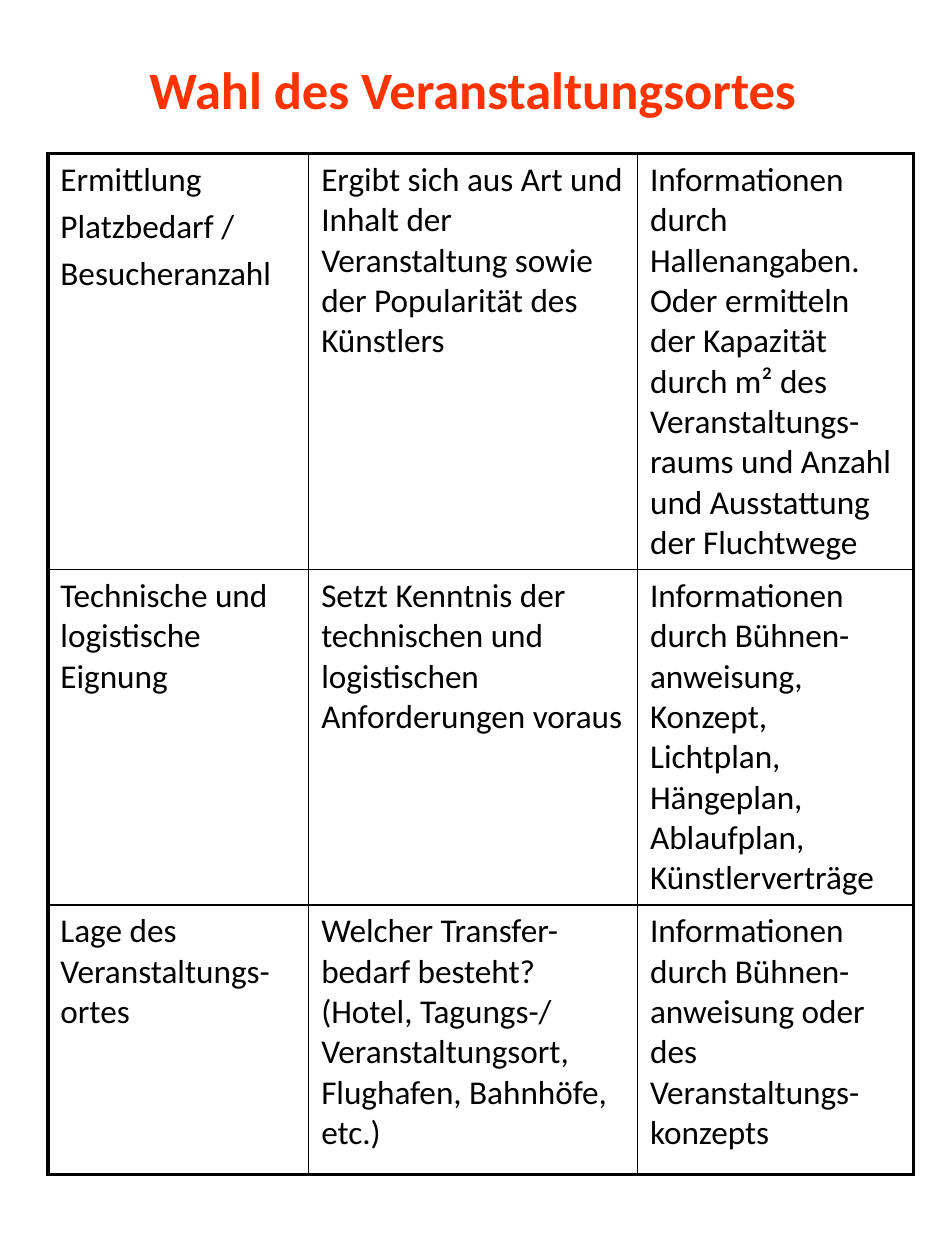
from dataclasses import dataclass

from lxml.etree import SubElement
from pptx import Presentation
from pptx.dml.color import RGBColor
from pptx.enum.text import MSO_ANCHOR, PP_ALIGN
from pptx.oxml.ns import qn
from pptx.util import Inches, Pt


@dataclass(frozen=True)
class Theme:
    """Colours, font, type sizes and line widths."""
    font: str = "Calibri"
    head: str = "FF3300"
    ink: str = "000000"
    paper: str = "FFFFFF"
    head_size: float = 30
    body_size: float = 19
    gap: float = 3.8
    thick: float = 2.25
    thin: float = 1


THEME = Theme()
TITLE = "Wahl des Veranstaltungsortes"
COLS = [2.07, 2.61, 2.19]
ROWS = [3.27, 2.63, 2.14]
CELLS = [
    [
        ["Ermittlung", "Platzbedarf /", "Besucheranzahl"],
        ["Ergibt sich aus Art und Inhalt der Veranstaltung sowie der "
         "Popularität des Künstlers"],
        ["Informationen durch Hallenangaben. Oder ermitteln der Kapazität "
         "durch m² des Veranstaltungs-raums und Anzahl und Ausstattung "
         "der Fluchtwege"],
    ],
    [
        ["Technische und logistische Eignung"],
        ["Setzt Kenntnis der technischen und logistischen Anforderungen "
         "voraus"],
        ["Informationen durch Bühnen-anweisung, Konzept, Lichtplan, "
         "Hängeplan, Ablaufplan, Künstlerverträge"],
    ],
    [
        ["Lage des Veranstaltungs-ortes"],
        ["Welcher Transfer-bedarf besteht? (Hotel, Tagungs-/ "
         "Veranstaltungsort, Flughafen, Bahnhöfe, etc.)"],
        ["Informationen durch Bühnen-anweisung oder des "
         "Veranstaltungs-konzepts"],
    ],
]


def add_run(para, text, size, color, bold=False):
    """Add one formatted run to a paragraph."""
    run = para.add_run()
    run.text = text
    font = run.font
    font.name, font.size, font.bold = THEME.font, Pt(size), bold
    font.color.rgb = RGBColor.from_string(color)


def add_title(slide):
    """Place and fill the title placeholder."""
    title = slide.shapes.title
    title.left, title.top = Inches(0.38), Inches(0.27)
    title.width, title.height = Inches(6.75), Inches(0.87)
    frame = title.text_frame
    frame.vertical_anchor = MSO_ANCHOR.MIDDLE
    para = frame.paragraphs[0]
    para.alignment = PP_ALIGN.CENTER
    add_run(para, TITLE, THEME.head_size, THEME.head, True)


def add_edges(cell, row, col):
    """Draw cell borders, thick along the outside of the table."""
    props = cell._tc.get_or_add_tcPr()
    outer = {
        "lnL": col == 0,
        "lnR": col == len(COLS) - 1,
        "lnT": row == 0,
        "lnB": row == len(ROWS) - 1,
    }
    for tag, edge in outer.items():
        width = Pt(THEME.thick if edge else THEME.thin)
        line = SubElement(props, qn(f"a:{tag}"), w=str(width))
        fill = SubElement(line, qn("a:solidFill"))
        SubElement(fill, qn("a:srgbClr"), val=THEME.ink)


def fill_cell(cell, lines):
    """Write the paragraphs of a cell and set its fill."""
    frame = cell.text_frame
    for num, text in enumerate(lines):
        para = frame.add_paragraph() if num else frame.paragraphs[0]
        para.space_before = Pt(THEME.gap if num else 0)
        add_run(para, text, THEME.body_size, THEME.ink)
    cell.fill.solid()
    cell.fill.fore_color.rgb = RGBColor.from_string(THEME.paper)


def add_grid(slide):
    """Build the table of criteria."""
    table = slide.shapes.add_table(
        len(ROWS), len(COLS), Inches(0.38), Inches(1.22),
        Inches(sum(COLS)), Inches(sum(ROWS))).table
    table.first_row = table.horz_banding = False
    for col, width in zip(table.columns, COLS):
        col.width = Inches(width)
    for row, height in zip(table.rows, ROWS):
        row.height = Inches(height)
    for row, line in enumerate(CELLS):
        for col, lines in enumerate(line):
            cell = table.cell(row, col)
            add_edges(cell, row, col)
            fill_cell(cell, lines)


def main():
    """Build and save the slide."""
    deck = Presentation()
    deck.slide_width, deck.slide_height = Inches(7.5), Inches(10)
    slide = deck.slides.add_slide(deck.slide_layouts.get_by_name("Title Only"))
    add_title(slide)
    add_grid(slide)
    deck.save("out.pptx")


if __name__ == "__main__":
    main()
